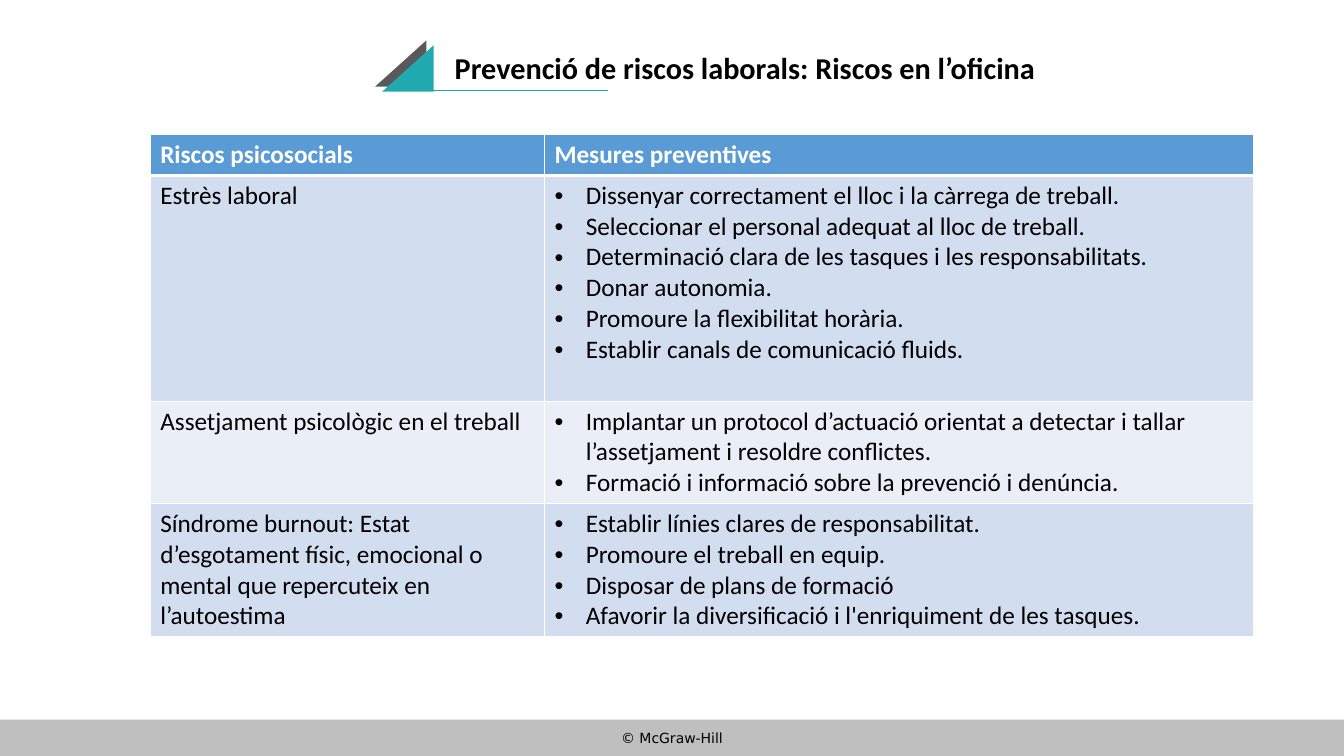
import pptx
import pptx.util
import pptx.dml.color
import pptx.enum.shapes
import pptx.enum.text
import pptx.oxml.ns
from lxml import etree

Inches = pptx.util.Inches
Pt = pptx.util.Pt
Shape = pptx.enum.shapes.MSO_SHAPE
Align = pptx.enum.text.PP_ALIGN
Anchor = pptx.enum.text.MSO_ANCHOR
qn = pptx.oxml.ns.qn

COLORS = {
    "header": "5B9BD5", "band_dark": "D2DEEF", "band_light": "EAEFF7",
    "teal": "20AAAF", "charcoal": "595959", "footer": "BFBFBF",
    "white": "FFFFFF", "black": "000000",
}
TITLE_FONT = {"name": "Calibri", "size": Pt(21.6), "bold": True}
HEADER_FONT = {"name": "Calibri", "size": Pt(18), "bold": True}
BODY_FONT = {"name": "Calibri", "size": Pt(18), "bold": False}
FOOTER_FONT = {"name": "DejaVu Sans", "size": Pt(10), "bold": False}

HEADINGS = ("Riscos psicosocials", "Mesures preventives")
RISKS = [
    ("Estrès laboral", [
        "Dissenyar correctament el lloc i la càrrega de treball.",
        "Seleccionar el personal adequat al lloc de treball.",
        "Determinació clara de les tasques i les responsabilitats.",
        "Donar autonomia.",
        "Promoure la flexibilitat horària.",
        "Establir canals de comunicació fluids.",
    ]),
    ("Assetjament psicològic en el treball", [
        "Implantar un protocol d’actuació orientat a detectar i tallar "
        "l’assetjament i resoldre conflictes.",
        "Formació i informació sobre la prevenció i denúncia.",
    ]),
    ("Síndrome burnout: Estat d’esgotament físic, emocional o mental que "
     "repercuteix en l’autoestima", [
        "Establir línies clares de responsabilitat.",
        "Promoure el treball en equip.",
        "Disposar de plans de formació",
        "Afavorir la diversificació i l'enriquiment de les tasques.",
    ]),
]
COLUMN_WIDTHS = (3.91, 7.03)
ROW_HEIGHTS = (0.41, 2.24, 1.01, 1.32)


def rgb(color):
    return pptx.dml.color.RGBColor.from_string(COLORS[color])


def apply_format(target, values):
    for name, value in values.items():
        setattr(target, name, value)


def write(paragraph, text, font, color):
    paragraph.text = text
    apply_format(paragraph.font, font)
    paragraph.font.color.rgb = rgb(color)


def add_block(shapes, kind, box, color):
    block = shapes.add_shape(kind, *map(Inches, box))
    block.shadow.inherit = False
    block.fill.solid()
    block.fill.fore_color.rgb = rgb(color)
    block.line.fill.background()
    return block


def build_footer(slide, box):
    bar = add_block(slide.shapes, Shape.RECTANGLE, box, "footer")
    apply_format(bar.text_frame, {"vertical_anchor": Anchor.MIDDLE, "margin_top": 0, "margin_bottom": 0})
    copyright_line = bar.text_frame.paragraphs[0]
    copyright_line.alignment = Align.CENTER
    write(copyright_line, "© McGraw-Hill", FOOTER_FONT, "black")


def build_title(slide, box):
    left, top, width, height = box
    title = slide.shapes.title
    apply_format(title, {"left": Inches(left + 0.69), "top": Inches(top + 0.08),
                         "width": Inches(width - 0.69), "height": Inches(height - 0.1)})
    apply_format(title.text_frame, {"vertical_anchor": Anchor.MIDDLE, "word_wrap": True,
                                    "margin_top": 0, "margin_bottom": 0})
    heading = title.text_frame.paragraphs[0]
    apply_format(heading, {"alignment": Align.LEFT, "line_spacing": 0.9})
    write(heading, "Prevenció de riscos laborals: Riscos en l’oficina", TITLE_FONT, "black")

    emblem = slide.shapes.add_group_shape().shapes
    for offset_x, offset_y, color in ((0, 0, "charcoal"), (0.07, 0.05, "teal")):
        wedge = add_block(emblem, Shape.ISOSCELES_TRIANGLE,
                          (left + offset_x, top + offset_y, 0.51, 0.46), color)
        wedge.adjustments[0] = 1
    underline = emblem.add_connector(
        pptx.enum.shapes.MSO_CONNECTOR.STRAIGHT,
        *map(Inches, (left + 0.55, top + 0.5, left + 2.31, top + 0.5)))
    underline.line.color.rgb = rgb("teal")
    underline.line.width = Pt(1)
    etree.SubElement(underline._element.spPr, qn("a:effectLst"))


def style_cell(cell, color, top_width, bottom_width):
    properties = cell._tc.get_or_add_tcPr()
    for side, width in (("L", 1), ("R", 1), ("T", top_width), ("B", bottom_width)):
        border = etree.SubElement(properties, qn("a:ln" + side), w=str(Pt(width)))
        fill = etree.SubElement(border, qn("a:solidFill"))
        etree.SubElement(fill, qn("a:srgbClr"), val=COLORS["white"])
    cell.fill.solid()
    cell.fill.fore_color.rgb = rgb(color)


def add_bullet(paragraph):
    properties = paragraph._p.get_or_add_pPr()
    properties.set("marL", str(Inches(0.31)))
    properties.set("indent", str(-Inches(0.31)))
    etree.SubElement(properties, qn("a:buFont"), typeface="Arial")
    etree.SubElement(properties, qn("a:buChar"), char="•")


def build_risk_table(slide, box):
    table = slide.shapes.add_table(len(RISKS) + 1, len(HEADINGS), *map(Inches, box)).table
    for column, width in zip(table.columns, COLUMN_WIDTHS):
        column.width = Inches(width)
    for row, height in zip(table.rows, ROW_HEIGHTS):
        row.height = Inches(height)
    for column, heading in enumerate(HEADINGS):
        cell = table.cell(0, column)
        style_cell(cell, "header", 1, 3)
        write(cell.text_frame.paragraphs[0], heading, HEADER_FONT, "white")
    for row, (risk, measures) in enumerate(RISKS, 1):
        risk_cell, measures_cell = table.cell(row, 0), table.cell(row, 1)
        for cell in (risk_cell, measures_cell):
            style_cell(cell, "band_dark" if row % 2 else "band_light", 3 if row == 1 else 1, 1)
        write(risk_cell.text_frame.paragraphs[0], risk, BODY_FONT, "black")
        for index, measure in enumerate(measures):
            frame = measures_cell.text_frame
            paragraph = frame.add_paragraph() if index else frame.paragraphs[0]
            add_bullet(paragraph)
            write(paragraph, measure, BODY_FONT, "black")


def main():
    presentation = pptx.Presentation()
    apply_format(presentation, {"slide_width": Inches(13.33), "slide_height": Inches(7.5)})
    slide = presentation.slides.add_slide(presentation.slide_layouts[5])
    build_footer(slide, (0, 7.14, 13.33, 0.36))
    build_title(slide, (3.72, 0.4, 7, 0.52))
    build_risk_table(slide, (1.49, 1.33, sum(COLUMN_WIDTHS), sum(ROW_HEIGHTS)))
    presentation.save("out.pptx")


if __name__ == "__main__":
    main()
